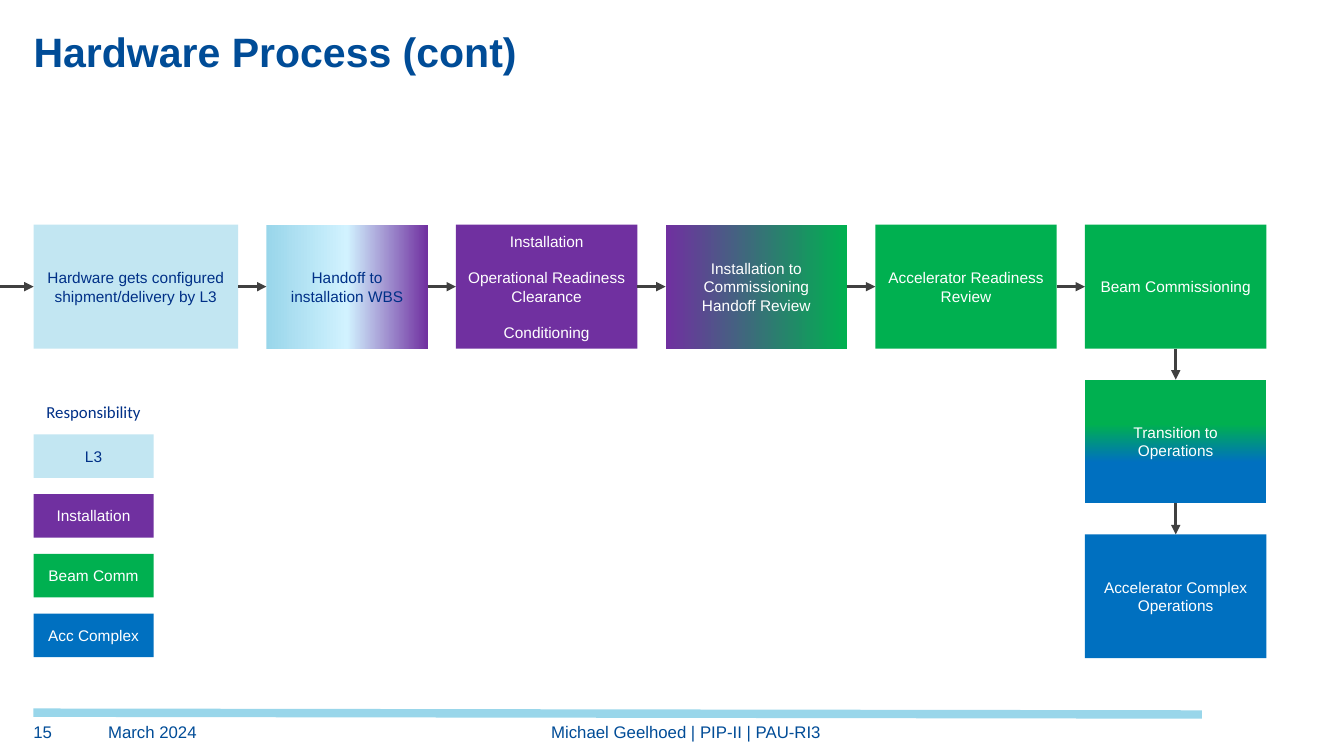
from dataclasses import dataclass

from lxml import etree
from pptx import Presentation
from pptx import util as u
from pptx.dml.color import RGBColor
from pptx.enum import shapes, text
from pptx.oxml.ns import qn

COLORS = {
    "l3": "C2E6F2", "installation": "7030A0", "beam": "00B050", "complex": "0070C0",
    "sky": "99D6EA", "pale": "D1F2FF", "navy": "003087", "title": "004C97",
    "arrow": "404040", "white": "FFFFFF",
}
TOP, LEFT, BOTTOM, RIGHT = range(4)
PARAGRAPH_GAP = 12.65

# Label paragraphs, fill (a color, or gradient stops with an angle), text color
ROW_STEPS = [
    (["Hardware gets configured shipment/delivery by L3"], "l3", "navy"),
    (["Handoff to installation WBS"],
     ([(0, "sky"), (50, "pale"), (100, "installation")], 0), "navy"),
    (["Installation", "Operational Readiness Clearance", "Conditioning"],
     "installation", "white"),
    (["Installation to Commissioning Handoff Review"],
     ([(0, "installation"), (100, "beam")], 0), "white"),
    (["Accelerator Readiness Review"], "beam", "white"),
    (["Beam Commissioning"], "beam", "white"),
]
COLUMN_STEPS = [
    (["Transition to Operations"], ([(36, "beam"), (67, "complex")], 90), "white"),
    (["Accelerator Complex Operations"], "complex", "white"),
]
LEGEND = [("L3", "l3", "navy"), ("Installation", "installation", "white"),
          ("Beam Comm", "beam", "white"), ("Acc Complex", "complex", "white")]


@dataclass
class Box:
    x: float
    y: float
    w: float
    h: float

    def share(self, x, y, w, h):
        """Sub-box given in percent of this box."""
        return Box(self.x + self.w * x / 100, self.y + self.h * y / 100,
                   self.w * w / 100, self.h * h / 100)

    def emu(self):
        return [u.Emu(round(v)) for v in (self.x, self.y, self.w, self.h)]


def tracks(weights, gap):
    """Percent (start, size) of tracks that fill a box with equal gaps."""
    scale = 100 / (sum(weights) + gap * (len(weights) - 1))
    start, result = 0, []
    for weight in weights:
        result.append((start * scale, weight * scale))
        start += weight + gap
    return result


def rgb(name):
    return RGBColor.from_string(COLORS[name])


def write(sp, lines, color, size, align=text.PP_ALIGN.CENTER, font="Arial",
          bold=False, **frame):
    tf = sp.text_frame
    for key, value in {"word_wrap": True, **frame}.items():
        setattr(tf, key, value)
    for i, line in enumerate(lines):
        p = tf.paragraphs[0] if i == 0 else tf.add_paragraph()
        p.alignment = align
        if i:
            p.space_before = u.Pt(PARAGRAPH_GAP)
        r = p.add_run()
        r.text = line
        for key, value in {"name": font, "size": u.Pt(size), "bold": bold}.items():
            setattr(r.font, key, value)
        r.font.color.rgb = rgb(color)


def add_text(s, box, line, color, size, **style):
    write(s.shapes.add_textbox(*box.emu()), [line], color, size, **style)


def paint_gradient(sp, stops, angle):
    sp.fill.gradient()
    sp.fill.gradient_angle = -angle % 360
    stop_list = sp.element.spPr.find(qn("a:gradFill")).find(qn("a:gsLst"))
    for child in list(stop_list):
        stop_list.remove(child)
    for position, name in stops:
        stop = etree.SubElement(stop_list, qn("a:gs"), pos=str(position * 1000))
        etree.SubElement(stop, qn("a:srgbClr"), val=COLORS[name])


def add_block(s, box, lines, fill, color):
    sp = s.shapes.add_shape(shapes.MSO_SHAPE.RECTANGLE, *box.emu())
    sp.shadow.inherit = False
    sp.line.fill.background()
    if isinstance(fill, str):
        sp.fill.solid()
        sp.fill.fore_color.rgb = rgb(fill)
    else:
        paint_gradient(sp, *fill)
    write(sp, lines, color, 11, vertical_anchor=text.MSO_ANCHOR.MIDDLE)
    return sp


def add_line(s, start, end, color, width):
    ends = [u.Emu(round(v)) for v in (*start, *end)]
    line = s.shapes.add_connector(shapes.MSO_CONNECTOR.STRAIGHT, *ends)
    line.line.color.rgb = rgb(color)
    line.line.width = u.Pt(width)
    etree.SubElement(line.element.spPr, qn("a:effectLst"))
    return line


def add_arrow(s, end, end_site, begin=None, begin_site=RIGHT):
    """Arrow into a block, from another block or from the slide's left edge."""
    middle = end.top + end.height / 2
    arrow = add_line(s, (0, middle), (end.left, middle), "arrow", 2.25)
    if begin is not None:
        arrow.begin_connect(begin, begin_site)
    arrow.end_connect(end, end_site)
    etree.SubElement(arrow.element.spPr.find(qn("a:ln")), qn("a:tailEnd"), type="triangle")


def add_title(s, box):
    title = s.shapes.title
    for key, value in zip(("left", "top", "width", "height"), box.emu()):
        setattr(title, key, value)
    write(title, ["Hardware Process (cont)"], "title", 29.3, bold=True,
          align=text.PP_ALIGN.LEFT, vertical_anchor=text.MSO_ANCHOR.BOTTOM,
          auto_size=text.MSO_AUTO_SIZE.NONE, margin_left=0, margin_right=0,
          margin_top=0, margin_bottom=0)


def add_flow(s, box):
    columns = tracks([2.03, 1.6] + [1.8] * 4, 0.28)
    rows = tracks([4] * 3, 1)
    top, height = rows[0]
    previous = None
    for (x, w), step in zip(columns, ROW_STEPS):
        block = add_block(s, box.share(x, top, w, height), *step)
        add_arrow(s, block, LEFT, previous)
        previous = block
    x, w = columns[-1]
    for (y, h), step in zip(rows[1:], COLUMN_STEPS):
        block = add_block(s, box.share(x, y, w, h), *step)
        add_arrow(s, block, TOP, previous, BOTTOM)
        previous = block


def add_legend(s, box):
    add_text(s, box.share(0, 0, 100, 11.7), "Responsibility", "navy", 12, font="Calibri")
    entries = box.share(0, 14.3, 100, 85.7)
    for (y, h), (label, fill, color) in zip(tracks([0.43] * 4, 0.16), LEGEND):
        add_block(s, entries.share(0, y, 100, h), [label], fill, color)


def add_footer(s, box):
    add_line(s, (box.x, box.y), (box.x + box.w, box.y + box.h * 0.05), "sky", 6)
    left, center = text.PP_ALIGN.LEFT, text.PP_ALIGN.CENTER
    for x, w, line, align in [
        (0, 5.2, "15", left),
        (6.4, 8.5, "March 2024", left),
        (16.48, 78.77, "Michael Geelhoed | PIP-II | PAU-RI3", center),
    ]:
        add_text(s, box.share(x, 25, w, 72), line, "title", 12, align=align,
                 margin_left=0, margin_right=0, margin_top=0, margin_bottom=0)


def main():
    prs = Presentation()
    prs.slide_width, prs.slide_height = u.Inches(13.33), u.Inches(7.5)
    s = prs.slides.add_slide(prs.slide_layouts.get_by_name("Title Only"))
    page = Box(0, 0, prs.slide_width, prs.slide_height)
    add_title(s, page.share(2.5, 3.73, 95, 6.27))
    add_flow(s, page.share(2.5, 29.73, 91.73, 57.33))
    add_legend(s, page.share(2.5, 52.53, 8.93, 34.4))
    add_footer(s, page.share(2.48, 94.27, 86.95, 4.8))
    prs.save("out.pptx")


if __name__ == "__main__":
    main()
